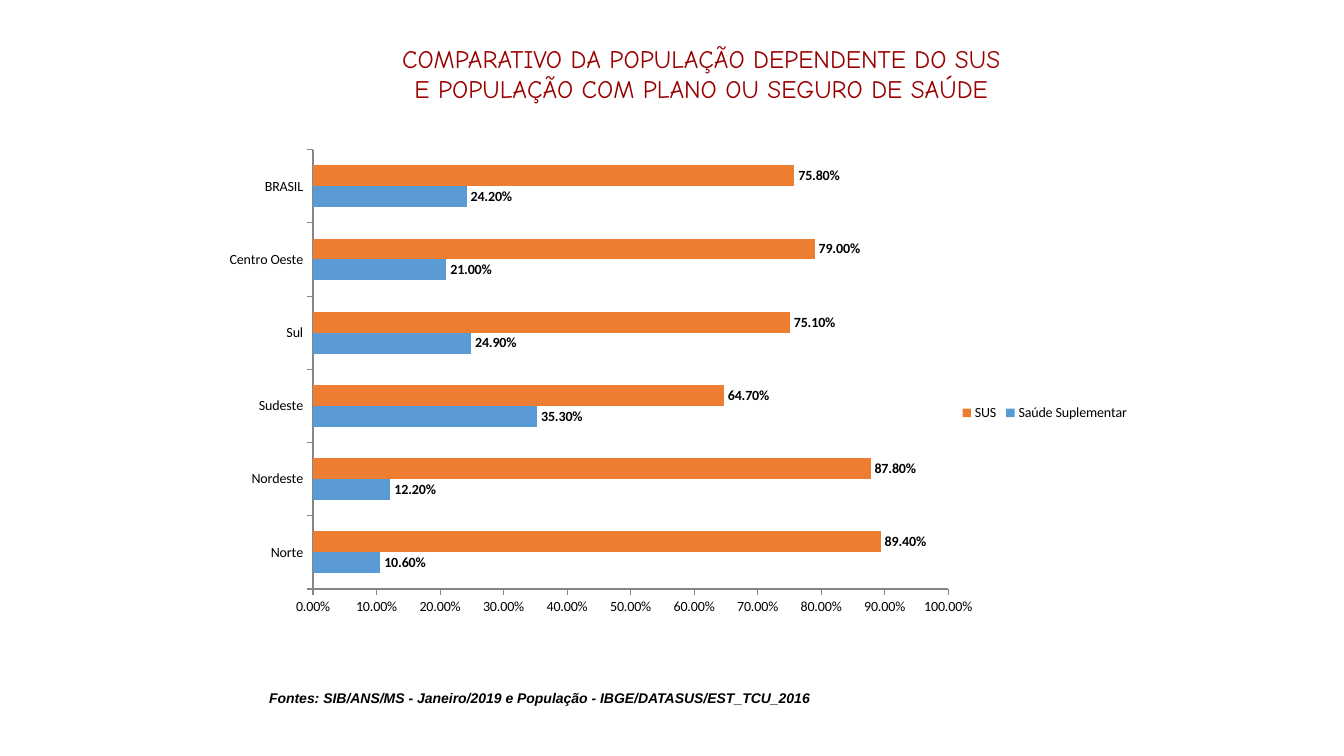
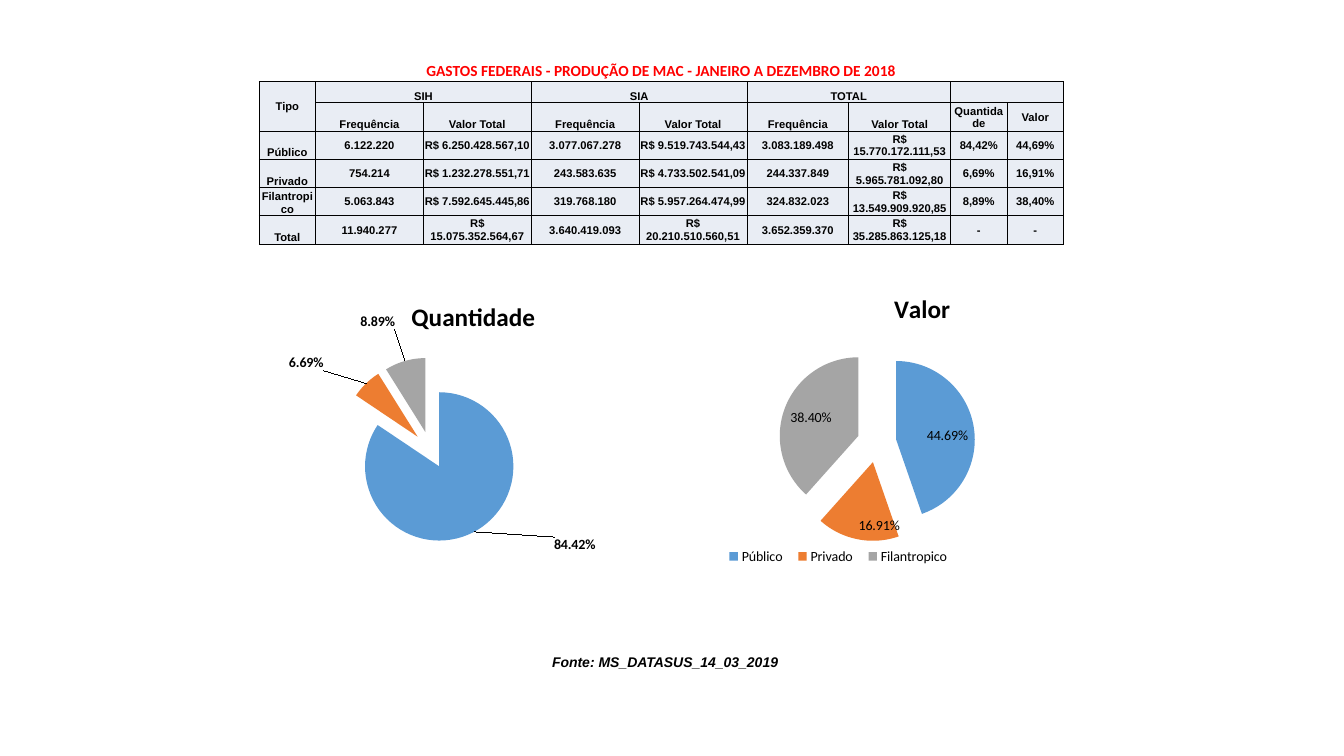
from dataclasses import dataclass
from lxml.etree import SubElement
from pptx import Presentation
from pptx.chart.data import CategoryChartData
from pptx.dml.color import RGBColor
from pptx.enum.chart import XL_CHART_TYPE, XL_LABEL_POSITION, XL_LEGEND_POSITION, XL_TICK_MARK
from pptx.enum.text import MSO_ANCHOR, PP_ALIGN
from pptx.oxml import parse_xml
from pptx.oxml.ns import nsdecls, qn
from pptx.util import Inches, Pt


@dataclass(frozen=True)
class Theme:
    black: str = "000000"
    title: str = "990000"
    table_title: str = "FF0000"
    cell: str = "E9EDF4"
    axis: str = "868686"
    blue: str = "5B9BD5"
    orange: str = "ED7D31"
    grey: str = "A5A5A5"
    title_font: str = "Comic Neue"
    body_font: str = "Arial"
    chart_font: str = "Calibri"
    title_size: int = 18
    table_title_size: int = 11
    small_size: int = 10
    cell_size: int = 8


THEME = Theme()
PERCENT = "0.00%"
PLAIN_TABLE = "{2D5ABB26-0587-4C30-8999-92F81FD0307C}"

# Content: coverage by region
COVERAGE_TITLE = [
    "COMPARATIVO DA POPULAÇÃO DEPENDENTE DO SUS",
    "E POPULAÇÃO COM PLANO OU SEGURO DE SAÚDE",
]
COVERAGE_SOURCE = "Fontes: SIB/ANS/MS - Janeiro/2019 e População - IBGE/DATASUS/EST_TCU_2016"
REGIONS = ["Norte", "Nordeste", "Sudeste", "Sul", "Centro Oeste", "BRASIL"]
COVERAGE = {
    "Saúde Suplementar": [0.106, 0.122, 0.353, 0.249, 0.21, 0.242],
    "SUS": [0.894, 0.878, 0.647, 0.751, 0.79, 0.758],
}

# Content: federal spending
SPENDING_SOURCE = "Fonte: MS_DATASUS_14_03_2019"
SPENDING_TITLE = "GASTOS FEDERAIS - PRODUÇÃO DE MAC - JANEIRO A DEZEMBRO DE 2018"
SPENDING_ROWS = [
    [SPENDING_TITLE] + [""] * 8,
    ["Tipo", "SIH", "", "SIA", "", "TOTAL", "", "", ""],
    [""] + ["Frequência", "Valor Total"] * 3 + ["Quantidade", "Valor"],
    ["Público", "6.122.220", "R$ 6.250.428.567,10", "3.077.067.278", "R$ 9.519.743.544,43",
     "3.083.189.498", "R$ 15.770.172.111,53", "84,42%", "44,69%"],
    ["Privado", "754.214", "R$ 1.232.278.551,71", "243.583.635", "R$ 4.733.502.541,09",
     "244.337.849", "R$ 5.965.781.092,80", "6,69%", "16,91%"],
    ["Filantropico", "5.063.843", "R$ 7.592.645.445,86", "319.768.180", "R$ 5.957.264.474,99",
     "324.832.023", "R$ 13.549.909.920,85", "8,89%", "38,40%"],
    ["Total", "11.940.277", "R$ 15.075.352.564,67", "3.640.419.093", "R$ 20.210.510.560,51",
     "3.652.359.370", "R$ 35.285.863.125,18", "-", "-"],
]
COLUMN_WIDTHS = [0.56] + [1.07] * 4 + [1.01] * 2 + [0.56] * 2
ROW_HEIGHTS = [0.21] * 2 + [0.28] * 5
MERGES = [((0, 0), (0, 8)), ((1, 0), (2, 0))] + [((1, c), (1, c + 1)) for c in (1, 3, 5, 7)]

# Pies: plot and legend are shares of the chart; label shifts are shares too
PIES = [
    dict(name="Quantidade", box=(2.57, 2.81, 4.25, 2.83), categories=["1", "2", "3"],
         values=[0.8442, 0.0669, 0.0889], plot=(0.08, 0.26, 0.64, 0.65), legend=None,
         bold=True, shifts=[(0.18, 0), (-0.09, -0.03), (-0.02, -0.09)]),
    dict(name="Valor", box=(6.9, 2.73, 4.49, 3), categories=["Público", "Privado", "Filantropico"],
         values=[0.4469, 0.1691, 0.384], plot=(0.18, 0.23, 0.44, 0.65),
         legend=(0.05, 0.89, 0.53, 0.08), bold=False, shifts=[]),
]


def color(value):
    return RGBColor.from_string(value)


def style(font, name, size, value=THEME.black, bold=False, italic=False):
    font.name, font.size, font.bold, font.italic = name, Pt(size), bold, italic
    font.color.rgb = color(value)


def inches(box):
    return [Inches(length) for length in box]


def add_text(slide, box, lines, align=PP_ALIGN.LEFT, anchor=MSO_ANCHOR.TOP, **look):
    frame = slide.shapes.add_textbox(*inches(box)).text_frame
    frame.word_wrap = True
    frame.vertical_anchor = anchor
    for index, line in enumerate(lines):
        paragraph = frame.paragraphs[0] if index == 0 else frame.add_paragraph()
        paragraph.text = line
        paragraph.alignment = align
        style(paragraph.font, **look)


def add_source(slide, box, text, align=PP_ALIGN.LEFT):
    add_text(slide, box, [text], align, name=THEME.body_font, size=THEME.small_size,
             bold=True, italic=True)


# Charts
def layout_xml(position, inner=False):
    modes = '<c:xMode val="edge"/><c:yMode val="edge"/>' if len(position) == 4 else ""
    target = '<c:layoutTarget val="inner"/>' if inner else ""
    parts = "".join(f'<c:{tag} val="{share}"/>' for tag, share in zip("xywh", position))
    return parse_xml(f'<c:layout {nsdecls("c")}><c:manualLayout>{target}{modes}{parts}'
                     "</c:manualLayout></c:layout>")


def add_chart(slide, kind, box, categories, series, plot, legend):
    data = CategoryChartData(number_format=PERCENT)
    data.categories = categories
    for name, values in series.items():
        data.add_series(name, values)
    chart = slide.shapes.add_chart(kind, *inches(box), data).chart
    style(chart.font, THEME.chart_font, THEME.small_size)
    area = chart._chartSpace.chart.plotArea
    for old in area.findall(qn("c:layout")):
        area.remove(old)
    area.insert(0, layout_xml(plot, inner=True))
    chart.has_legend = legend is not None
    if legend:
        chart.legend.position = XL_LEGEND_POSITION.RIGHT
        chart.legend.include_in_layout = False
        element = chart.legend._element
        for old in element.findall(qn("c:layout")):
            element.remove(old)
        element.find(qn("c:legendPos")).addnext(layout_xml(legend))
    return chart


def label_values(owner, position, bold):
    labels = owner.data_labels
    labels.show_value = True
    labels.number_format, labels.number_format_is_linked = PERCENT, False
    labels.position = position
    style(labels.font, THEME.chart_font, THEME.small_size, bold=bold)


def add_coverage_chart(slide):
    chart = add_chart(slide, XL_CHART_TYPE.BAR_CLUSTERED, (2.1, 1.39, 9.13, 4.79), REGIONS,
                      COVERAGE, (0.11, 0.02, 0.69, 0.91), (0.81, 0.54, 0.19, 0.05))
    chart.has_title = False
    plot = chart.plots[0]
    plot.gap_width, plot.overlap, plot.vary_by_categories = 150, 0, False
    for series, fill in zip(plot.series, (THEME.blue, THEME.orange)):
        series.format.fill.solid()
        series.format.fill.fore_color.rgb = color(fill)
        label_values(series, XL_LABEL_POSITION.OUTSIDE_END, True)
    for axis in (chart.category_axis, chart.value_axis):
        axis.has_major_gridlines = False
        axis.major_tick_mark = XL_TICK_MARK.OUTSIDE
        axis.format.line.color.rgb = color(THEME.axis)
        axis.format.line.width = Pt(0.75)
    value_axis = chart.value_axis
    value_axis.minimum_scale, value_axis.maximum_scale, value_axis.major_unit = 0, 1, 0.1
    value_axis.tick_labels.number_format = PERCENT
    value_axis.tick_labels.number_format_is_linked = False


def shift_labels(series, shifts):
    for index in range(len(shifts)):
        label = series.points[index].data_label
        label.position = XL_LABEL_POSITION.OUTSIDE_END
        style(label.font, THEME.chart_font, THEME.small_size, bold=True)
    labels = series._element.find(qn("c:dLbls")).findall(qn("c:dLbl"))
    for label, shift in zip(labels, shifts):
        layout = layout_xml(shift)
        label.find(qn("c:idx")).addnext(layout)
        layout.addnext(parse_xml(
            f'<c:numFmt {nsdecls("c")} formatCode="{PERCENT}" sourceLinked="0"/>'))


def add_pie(slide, pie):
    chart = add_chart(slide, XL_CHART_TYPE.PIE, pie["box"], pie["categories"],
                      {pie["name"]: pie["values"]}, pie["plot"], pie["legend"])
    chart.has_title = True
    paragraph = chart.chart_title.text_frame.paragraphs[0]
    paragraph.text = pie["name"]
    style(paragraph.font, THEME.chart_font, THEME.title_size, bold=True)
    chart.plots[0].vary_by_categories = True
    series = chart.plots[0].series[0]
    for index, fill in enumerate((THEME.blue, THEME.orange, THEME.grey)):
        point_fill = series.points[index].format.fill
        point_fill.solid()
        point_fill.fore_color.rgb = color(fill)
    first_point = series._element.find(qn("c:dPt"))
    first_point.addprevious(parse_xml(f'<c:explosion {nsdecls("c")} val="25"/>'))
    position = XL_LABEL_POSITION.OUTSIDE_END if pie["shifts"] else XL_LABEL_POSITION.INSIDE_END
    label_values(series, position, pie["bold"])
    shift_labels(series, pie["shifts"])


# Table
def add_borders(cell, sides):
    properties = cell._tc.get_or_add_tcPr()
    for side in sides:
        line = SubElement(properties, qn(f"a:ln{side}"), w=str(Pt(0.5)))
        fill = SubElement(line, qn("a:solidFill"))
        SubElement(fill, qn("a:srgbClr"), val=THEME.black)


def fill_cell(cell, text, row, column):
    is_title = row == 0
    add_borders(cell, "B" if is_title else "LRTB")
    if is_title:
        cell.fill.background()
    else:
        cell.fill.solid()
        cell.fill.fore_color.rgb = color(THEME.cell)
    cell.margin_left = cell.margin_right = cell.margin_top = Inches(0.01)
    cell.margin_bottom = 0
    group_header = row in (1, 2) and 1 <= column <= 6
    row_name = row > 2 and column == 0
    cell.vertical_anchor = MSO_ANCHOR.BOTTOM if group_header or row_name else MSO_ANCHOR.MIDDLE
    paragraph = cell.text_frame.paragraphs[0]
    paragraph.text = text
    paragraph.alignment = PP_ALIGN.CENTER
    if is_title:
        style(paragraph.font, THEME.chart_font, THEME.table_title_size, THEME.table_title, True)
    else:
        style(paragraph.font, THEME.body_font, THEME.cell_size, bold=True)
    if not text:
        SubElement(paragraph._p, qn("a:endParaRPr"), sz=str(THEME.cell_size * 100))


def add_spending_table(slide):
    box = (2.57, 0.6, sum(COLUMN_WIDTHS), sum(ROW_HEIGHTS))
    table = slide.shapes.add_table(len(ROW_HEIGHTS), len(COLUMN_WIDTHS), *inches(box)).table
    table.first_row = table.horz_banding = False
    table._tbl.tblPr.find(qn("a:tableStyleId")).text = PLAIN_TABLE
    for column, width in zip(table.columns, COLUMN_WIDTHS):
        column.width = Inches(width)
    for row, height in zip(table.rows, ROW_HEIGHTS):
        row.height = Inches(height)
    for start, end in MERGES:
        table.cell(*start).merge(table.cell(*end))
    for row, texts in enumerate(SPENDING_ROWS):
        for column, text in enumerate(texts):
            fill_cell(table.cell(row, column), text, row, column)


def main():
    presentation = Presentation()
    presentation.slide_width, presentation.slide_height = Inches(13.33), Inches(7.5)
    blank = presentation.slide_layouts[6]

    # Coverage slide
    slide = presentation.slides.add_slide(blank)
    add_text(slide, (3.28, 0.36, 7.35, 0.74), COVERAGE_TITLE, PP_ALIGN.CENTER, MSO_ANCHOR.MIDDLE,
             name=THEME.title_font, size=THEME.title_size, value=THEME.title)
    add_source(slide, (2.57, 6.79, 8.27, 0.27), COVERAGE_SOURCE)
    add_coverage_chart(slide)

    # Spending slide
    slide = presentation.slides.add_slide(blank)
    add_source(slide, (3.6, 6.43, 5.99, 0.27), SPENDING_SOURCE, PP_ALIGN.CENTER)
    add_spending_table(slide)
    for pie in PIES:
        add_pie(slide, pie)
    presentation.save("out.pptx")


if __name__ == "__main__":
    main()
